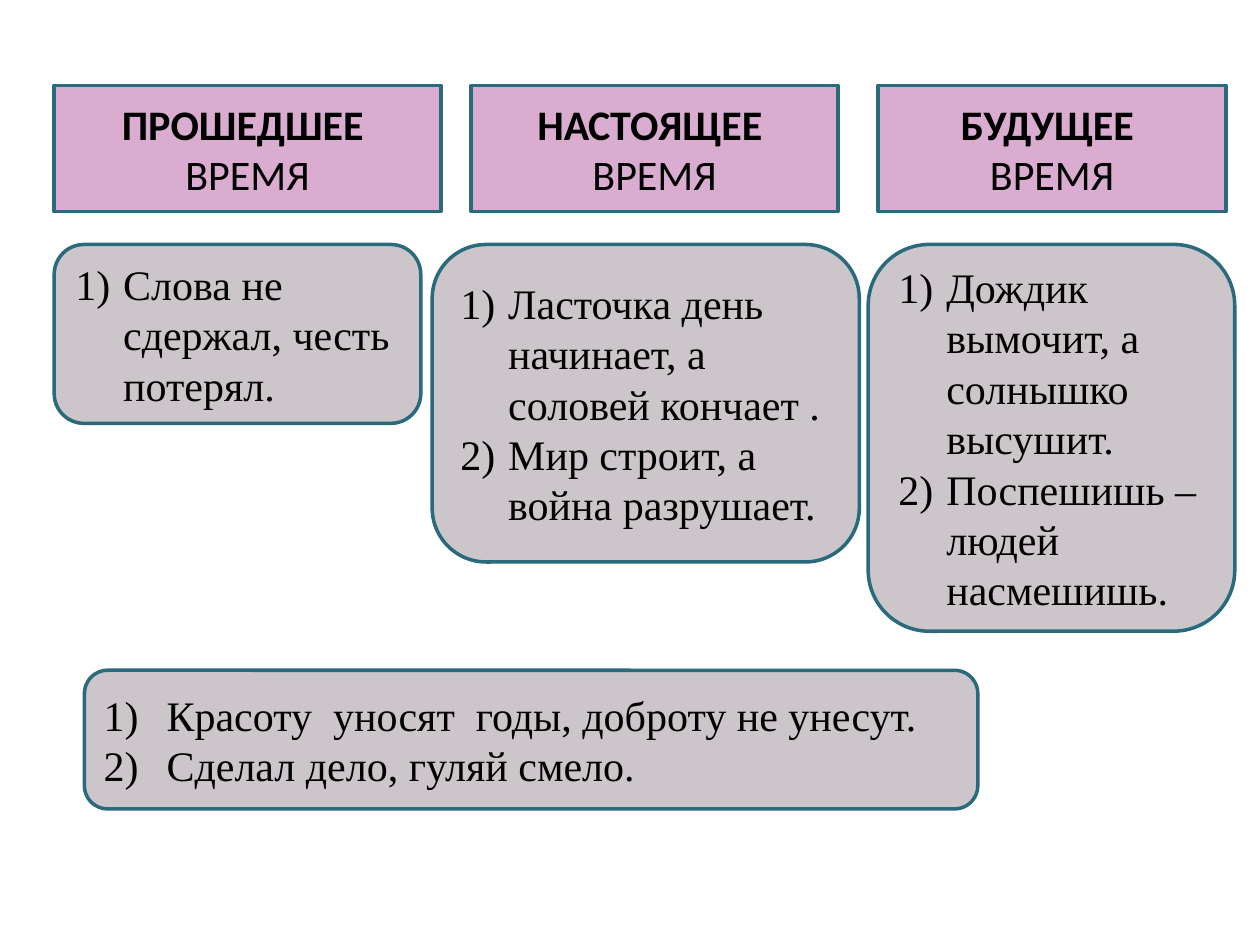
from lxml.etree import SubElement
from pptx import Presentation
from pptx.dml.color import RGBColor
from pptx.enum.shapes import MSO_SHAPE as SHAPE
from pptx.enum.text import MSO_ANCHOR as ANCHOR, PP_ALIGN as ALIGN
from pptx.oxml.ns import qn
from pptx.util import Inches, Pt

COLUMNS, ROWS = 100, 75
BLACK = RGBColor(0x00, 0x00, 0x00)
TEAL = RGBColor(0x29, 0x6B, 0x7C)
PLUM = RGBColor(0xA7, 0x39, 0x8F)
GREY = RGBColor(0xCC, 0xC6, 0xCB)

HEADER_TOP, HEADER_HEIGHT, LIST_TOP = 6.8, 10, 19.4
TENSES = [
    ("ПРОШЕДШЕЕ", (4.3, 30.7), (4.3, 29.1, 14.2), 0.167,
     ["Слова не сдержал, честь потерял."]),
    ("НАСТОЯЩЕЕ", (37.4, 29.1), (34.3, 33.9, 25.2), 0.17,
     ["Ласточка день начинает, а соловей кончает .",
      "Мир строит, а война разрушает."]),
    ("БУДУЩЕЕ", (69.7, 27.6), (68.9, 29.1, 30.7), 0.167,
     ["Дождик вымочит, а солнышко высушит.",
      "Поспешишь – людей насмешишь."]),
]
GENERAL_BOX = (6.7, 53.2, 70.9, 11)
GENERAL = ["Красоту  уносят  годы, доброту не унесут.",
           "Сделал дело, гуляй смело."]


def add_panel(prs, slide, kind, box, fill):
    """Draw an outlined panel on a box of grid columns and rows."""
    column, row = prs.slide_width / COLUMNS, prs.slide_height / ROWS
    x, y, w, h = box
    sp = slide.shapes.add_shape(kind, round(x * column), round(y * row),
                                round(w * column), round(h * row))
    sp.shadow.inherit = False
    sp.fill.solid()
    sp.fill.fore_color.rgb = fill
    sp.line.color.rgb = TEAL
    sp.line.width = Pt(2)
    sp.text_frame.word_wrap = True
    sp.text_frame.vertical_anchor = ANCHOR.MIDDLE
    return sp


def add_text(tf, text, first=False, font="Times New Roman", bold=False,
             align=ALIGN.LEFT, indent=None):
    """Write a paragraph, numbered when an indent in inches is given."""
    p = tf.paragraphs[0] if first else tf.add_paragraph()
    p.alignment = align
    if indent:
        pPr = p._p.get_or_add_pPr()
        pPr.set("marL", str(Inches(indent)))
        pPr.set("indent", str(-Inches(indent)))
        SubElement(pPr, qn("a:buFont"), typeface="+mj-lt")
        SubElement(pPr, qn("a:buAutoNum"), type="arabicParenR")
    r = p.add_run()
    r.text = text
    r.font.name = font
    r.font.size = Pt(24)
    r.font.bold = bold
    r.font.color.rgb = BLACK


def add_header(prs, slide, box, name):
    """Draw a translucent tense heading."""
    sp = add_panel(prs, slide, SHAPE.RECTANGLE, box, PLUM)
    color = sp._element.spPr.find(qn("a:solidFill"))[0]
    SubElement(color, qn("a:alpha"), val="41000")
    style = dict(font="Calibri", align=ALIGN.CENTER)
    add_text(sp.text_frame, name + " ", first=True, bold=True, **style)
    add_text(sp.text_frame, "ВРЕМЯ", **style)


def add_proverbs(prs, slide, box, proverbs, indent=0.38, corner=0.167):
    """Draw a rounded panel with a numbered list of proverbs."""
    sp = add_panel(prs, slide, SHAPE.ROUNDED_RECTANGLE, box, GREY)
    sp.adjustments[0] = corner
    for i, proverb in enumerate(proverbs):
        add_text(sp.text_frame, proverb, first=i == 0, indent=indent)


def main():
    """Build the slide of proverbs sorted by tense."""
    prs = Presentation()
    prs.slide_width, prs.slide_height = Inches(10), Inches(7.5)
    slide = prs.slides.add_slide(prs.slide_layouts[6])
    for name, (hx, hw), (x, w, h), corner, proverbs in TENSES:
        add_header(prs, slide, (hx, HEADER_TOP, hw, HEADER_HEIGHT), name)
        add_proverbs(prs, slide, (x, LIST_TOP, w, h), proverbs, corner=corner)
    add_proverbs(prs, slide, GENERAL_BOX, GENERAL, indent=0.5)
    prs.save("out.pptx")


if __name__ == "__main__":
    main()
